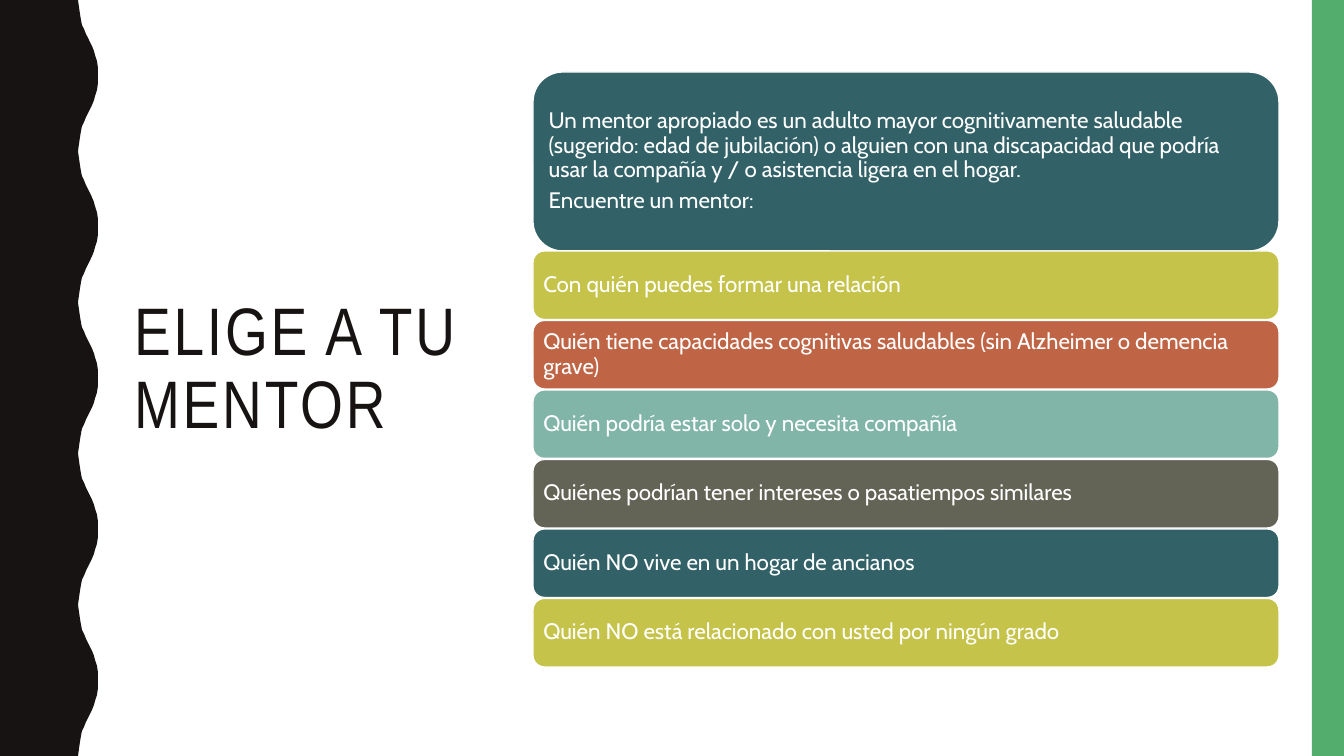
from pptx import Presentation
from pptx.dml.color import RGBColor
from pptx.enum.shapes import MSO_SHAPE
from pptx.enum.text import MSO_ANCHOR, MSO_AUTO_SIZE, PP_ALIGN
from pptx.util import Pt

RECT, ROUND = MSO_SHAPE.RECTANGLE, MSO_SHAPE.ROUNDED_RECTANGLE
MIDDLE, LEFT, FIXED = MSO_ANCHOR.MIDDLE, PP_ALIGN.LEFT, MSO_AUTO_SIZE.NONE

TITLE = "ELIGE A TU MENTOR"
INTRO = [
    "Un mentor apropiado es un adulto mayor cognitivamente saludable (sugerido: edad de "
    "jubilación) o alguien con una discapacidad que podría usar la compañía y / o "
    "asistencia ligera en el hogar.",
    "Encuentre un mentor:",
]
TRAITS = [
    ("Con quién puedes formar una relación", "lime"),
    ("Quién tiene capacidades cognitivas saludables (sin Alzheimer o demencia grave)", "rust"),
    ("Quién podría estar solo y necesita compañía", "mint"),
    ("Quiénes podrían tener intereses o pasatiempos similares", "olive"),
    ("Quién NO vive en un hogar de ancianos", "teal"),
    ("Quién NO está relacionado con usted por ningún grado", "lime"),
]
COLORS = {
    "ink": "171312", "green": "53AE6E", "white": "FFFFFF", "teal": "326267",
    "lime": "C5C34A", "rust": "BF6546", "mint": "81B5A8", "olive": "636455",
}
WIDE, HIGH = 1344, 756
SCALE = 914400 / 100.8
WAVES = 5
CURVE = [(78, 0), (79, 7), (80, 14), (81, 20), (82, 25), (84, 29), (86, 34), (88, 38),
         (90, 42), (92, 46), (94, 51), (95, 55), (97, 61), (98, 68), (98, 75)]
LIST_X, LIST_W = 533, 746
INTRO_Y, INTRO_H = 72, 179
LIST_Y, LIST_END, GAP = 251, 668, 1


def emu(px):
    return round(px * SCALE)


def color(name):
    return RGBColor.from_string(COLORS[name])


def style(shape, fill, line=None):
    shape.shadow.inherit = False
    shape.fill.solid()
    shape.fill.fore_color.rgb = color(fill)
    if line:
        shape.line.color.rgb = color(line)
        shape.line.width = Pt(1)
    else:
        shape.line.fill.background()


def write(para, text, font, size, ink):
    para.alignment = LEFT
    para.line_spacing = 0.9
    run = para.add_run()
    run.text = text
    run.font.name = font
    run.font.size = Pt(size)
    run.font.color.rgb = color(ink)
    return run


def block(kind, x, y, w, h, fill, line=None):
    shape = slide.shapes.add_shape(kind, emu(x), emu(y), emu(w), emu(h))
    style(shape, fill, line)
    return shape


def card(y, h, fill, lines):
    frame = block(ROUND, LIST_X, y, LIST_W, h, fill, "white").text_frame
    frame.word_wrap = True
    frame.vertical_anchor = MIDDLE
    frame.margin_left = frame.margin_right = emu(7)
    frame.margin_top = frame.margin_bottom = emu(7)
    for i, text in enumerate(lines):
        para = frame.add_paragraph() if i else frame.paragraphs[0]
        para.space_after = Pt(5)
        write(para, text, "Cabin", 16, "white")


deck = Presentation()
deck.slide_width, deck.slide_height = emu(WIDE), emu(HIGH)
slide = deck.slides.add_slide(deck.slide_layouts[5])

step = HIGH / WAVES
wave = CURVE + [(x, step - y) for x, y in reversed(CURVE)]
edge = [(x, i * step + y) for i in range(WAVES) for x, y in wave]
path = slide.shapes.build_freeform(0, 0, scale=1)
path.add_line_segments([(emu(x), emu(y)) for x, y in edge + [(0, HIGH)]])
style(path.convert_to_shape(), "ink")
block(RECT, 1312, 0, 32, HIGH, "green")

title = slide.shapes.title
title.left, title.top, title.width, title.height = map(emu, (124, 72, 426, 596))
frame = title.text_frame
frame.word_wrap = True
frame.auto_size = FIXED
frame.vertical_anchor = MIDDLE
run = write(frame.paragraphs[0], TITLE, "Arial Narrow", 48, "ink")
run.font._element.set("spc", "200")

card(INTRO_Y, INTRO_H, "teal", INTRO)
pitch = (LIST_END - LIST_Y) / len(TRAITS)
for i, (text, fill) in enumerate(TRAITS):
    card(LIST_Y + i * pitch, pitch - GAP, fill, [text])

deck.save("out.pptx")
